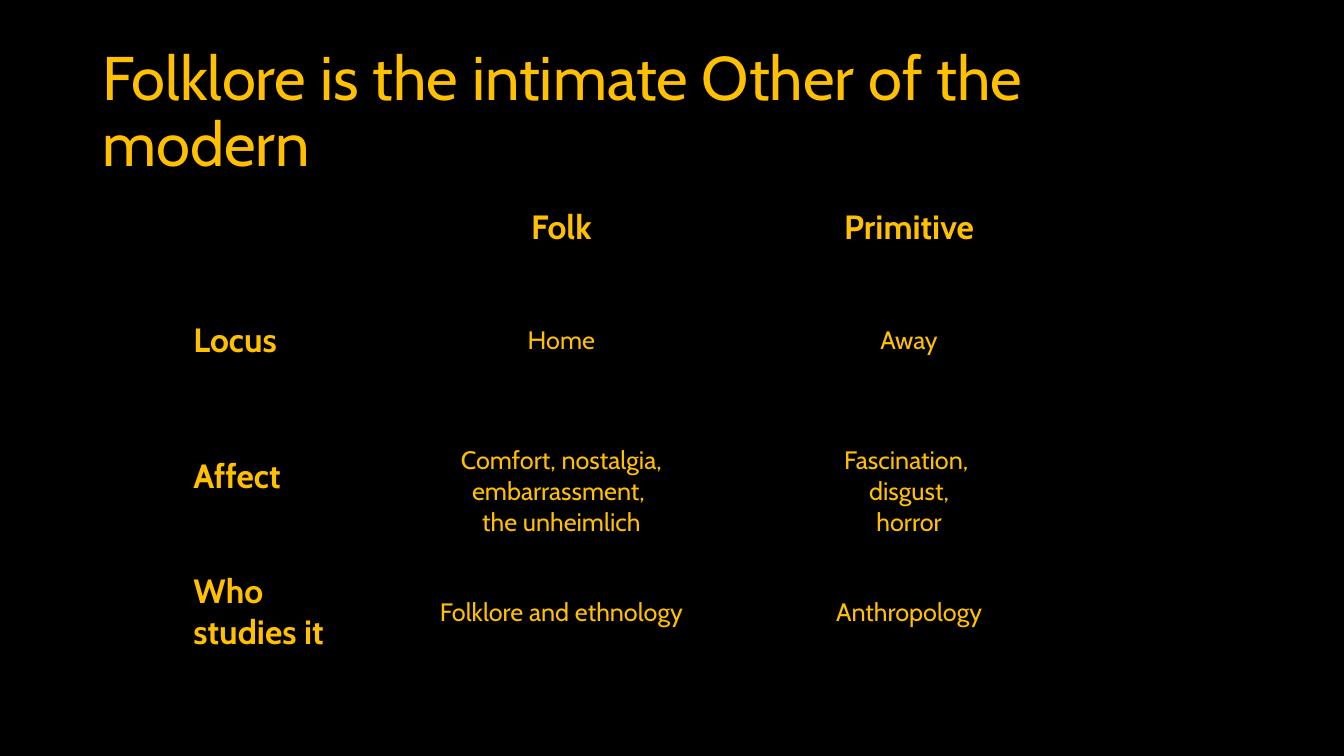
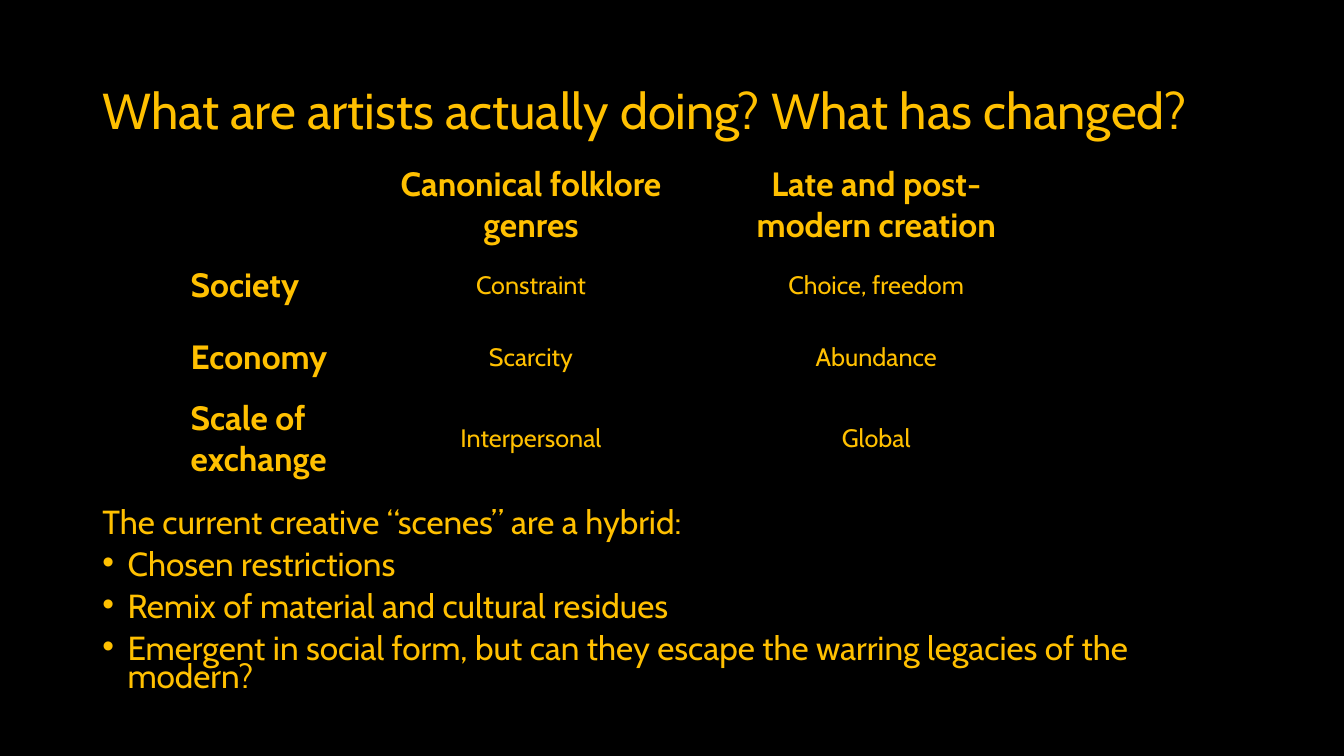
"""Build two black-and-gold slides that compare folklore with its others."""
from lxml import etree
from pptx import Presentation
from pptx.dml.color import RGBColor
from pptx.enum import text
from pptx.oxml import ns
from pptx.util import Pt

COLORS = {"ground": "000000", "gold": "FFC000"}
FONT = "Cabin"
GROUND = RGBColor.from_string(COLORS["ground"])
GOLD = RGBColor.from_string(COLORS["gold"])
CENTER, MIDDLE = text.PP_ALIGN.CENTER, text.MSO_ANCHOR.MIDDLE


def style(frame, size, bold=False, align=None, lead=None):
    for para in frame.paragraphs:
        para.alignment = align
        para.line_spacing = lead
        for run in para.runs:
            run.font.name = FONT
            run.font.size = Pt(size)
            run.font.bold = bold
            run.font.color.rgb = GOLD


def add_text(slide, box, words, size, lead):
    frame = slide.shapes.add_textbox(*map(Pt, box)).text_frame
    frame.word_wrap = True
    frame.text = words
    style(frame, size, lead=lead)
    return frame


pages = [
    {
        "title": "Folklore is the intimate Other of the modern", "size": 44,
        "spot": (131, 144), "cols": (125.3, 289.4, 207.4),
        "rows": (50.4, 97.2, 97.2, 97.2),
        "cells": [
            ("", "Folk", "Primitive"),
            ("Locus", "Home", "Away"),
            ("Affect", "Comfort, nostalgia,\nembarrassment, \nthe unheimlich",
             "Fascination, \ndisgust,\nhorror"),
            ("Who studies it", "Folklore and ethnology", "Anthropology"),
        ],
    },
    {
        "title": "What are artists actually doing? What has changed?", "size": 36,
        "spot": (129, 113.8), "cols": (124.6, 251.3, 242),
        "rows": (60.5, 51.1, 51.1, 60.5),
        "cells": [
            ("", "Canonical folklore genres", "Late and post-modern creation"),
            ("Society", "Constraint", "Choice, freedom"),
            ("Economy", "Scarcity", "Abundance"),
            ("Scale of exchange", "Interpersonal", "Global"),
        ],
        "body": [
            "The current creative “scenes” are a hybrid:",
            "Chosen restrictions",
            "Remix of material and cultural residues",
            "Emergent in social form, but can they escape the warring legacies of the modern?",
        ],
    },
]

deck = Presentation()
deck.slide_width, deck.slide_height = Pt(960), Pt(540)

for page in pages:
    slide = deck.slides.add_slide(deck.slide_layouts[6])
    slide.background.fill.solid()
    slide.background.fill.fore_color.rgb = GROUND

    title = add_text(slide, (66, 28.8, 828, 104.4), page["title"], page["size"], 0.9)
    title.vertical_anchor = MIDDLE

    cols, rows = page["cols"], page["rows"]
    area = (*page["spot"], sum(cols), sum(rows))
    table = slide.shapes.add_table(len(rows), len(cols), *map(Pt, area)).table
    for col, width in zip(table.columns, cols):
        col.width = Pt(width)
    for row, height in zip(table.rows, rows):
        row.height = Pt(height)

    for r, line in enumerate(page["cells"]):
        for c, words in enumerate(line):
            cell = table.cell(r, c)
            props = cell._tc.get_or_add_tcPr()
            for side in ("lnL", "lnR", "lnT", "lnB"):
                edge = etree.SubElement(props, ns.qn("a:" + side), w=str(Pt(1)))
                paint = etree.SubElement(edge, ns.qn("a:solidFill"))
                etree.SubElement(paint, ns.qn("a:srgbClr"), val=COLORS["ground"])
            cell.fill.solid()
            cell.fill.fore_color.rgb = GROUND
            cell.text_frame.text = words
            head = r == 0 or c == 0
            style(cell.text_frame, 24 if head else 18, head, CENTER if c else None)
            if r:
                cell.vertical_anchor = MIDDLE
            if "\n" in words:
                cell.margin_top = Pt(25.4)

    if "body" in page:
        body = add_text(slide, (66, 362.2, 813, 141.8), "\n".join(page["body"]), 23.8, 0.7)
        for n, para in enumerate(body.paragraphs):
            para.space_before = Pt(10)
            if n:
                props = para._p.get_or_add_pPr()
                props.set("marL", str(Pt(18)))
                props.set("indent", str(-Pt(18)))
                etree.SubElement(props, ns.qn("a:buFont"), typeface="Arial")
                etree.SubElement(props, ns.qn("a:buChar"), char="•")

deck.save("out.pptx")
